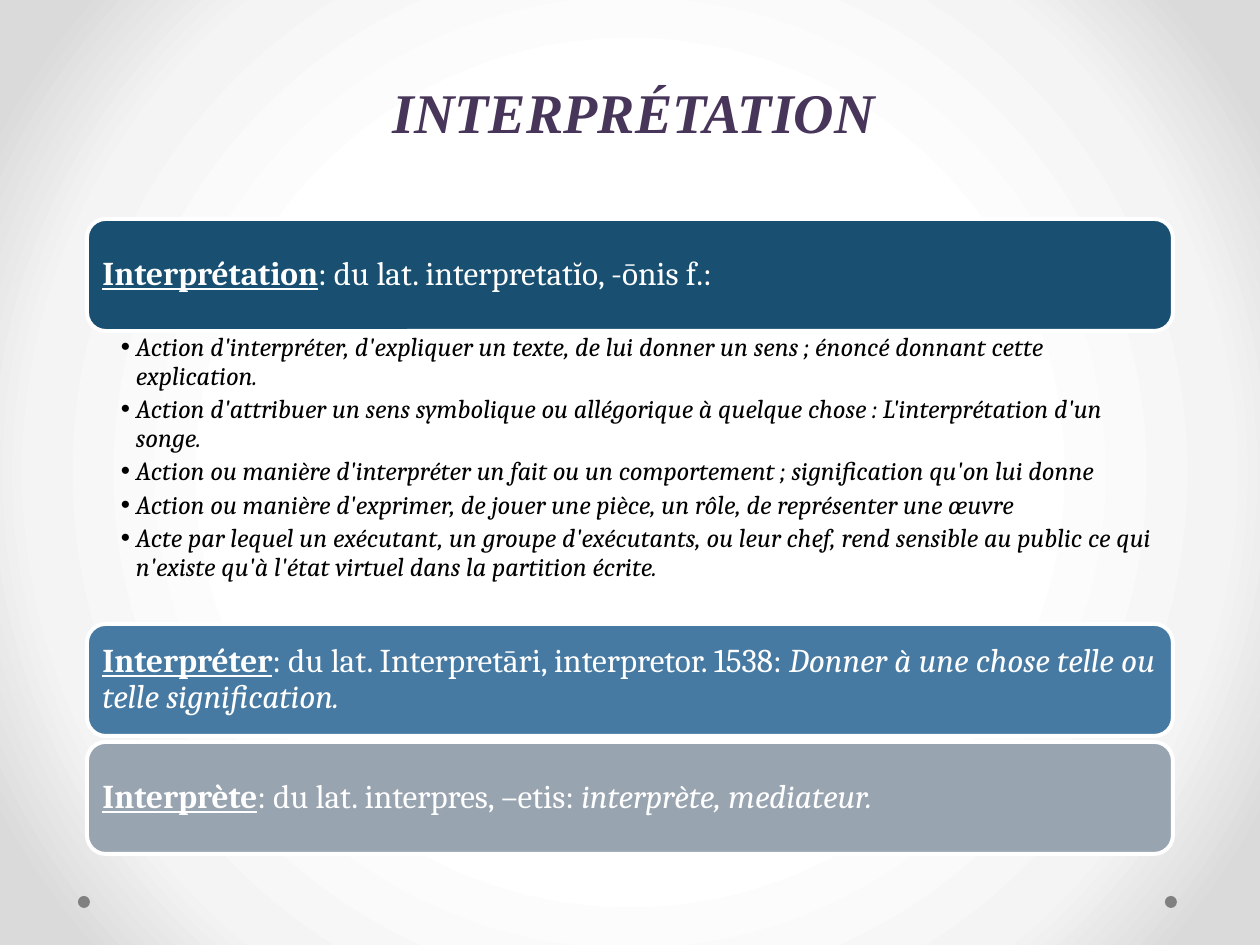
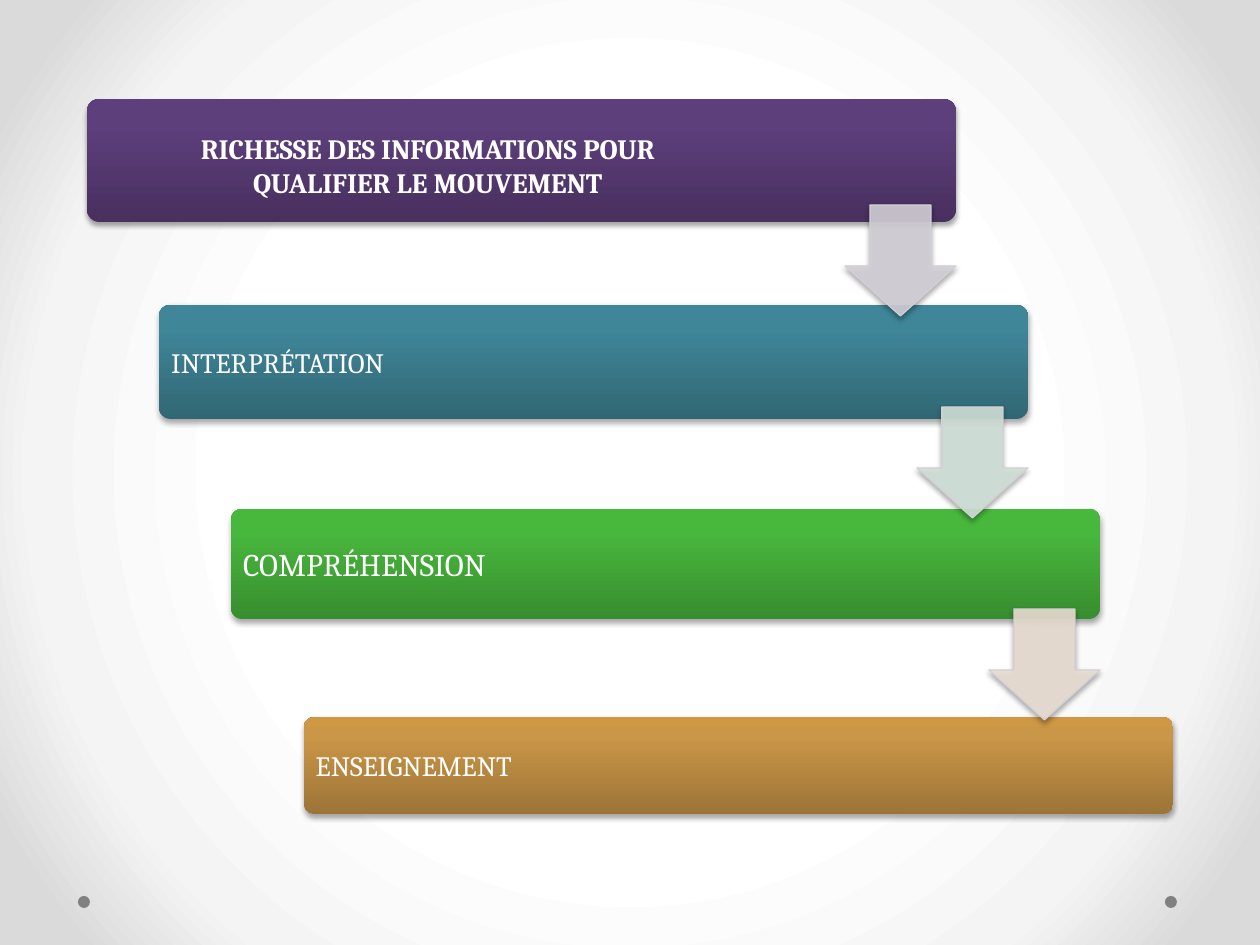
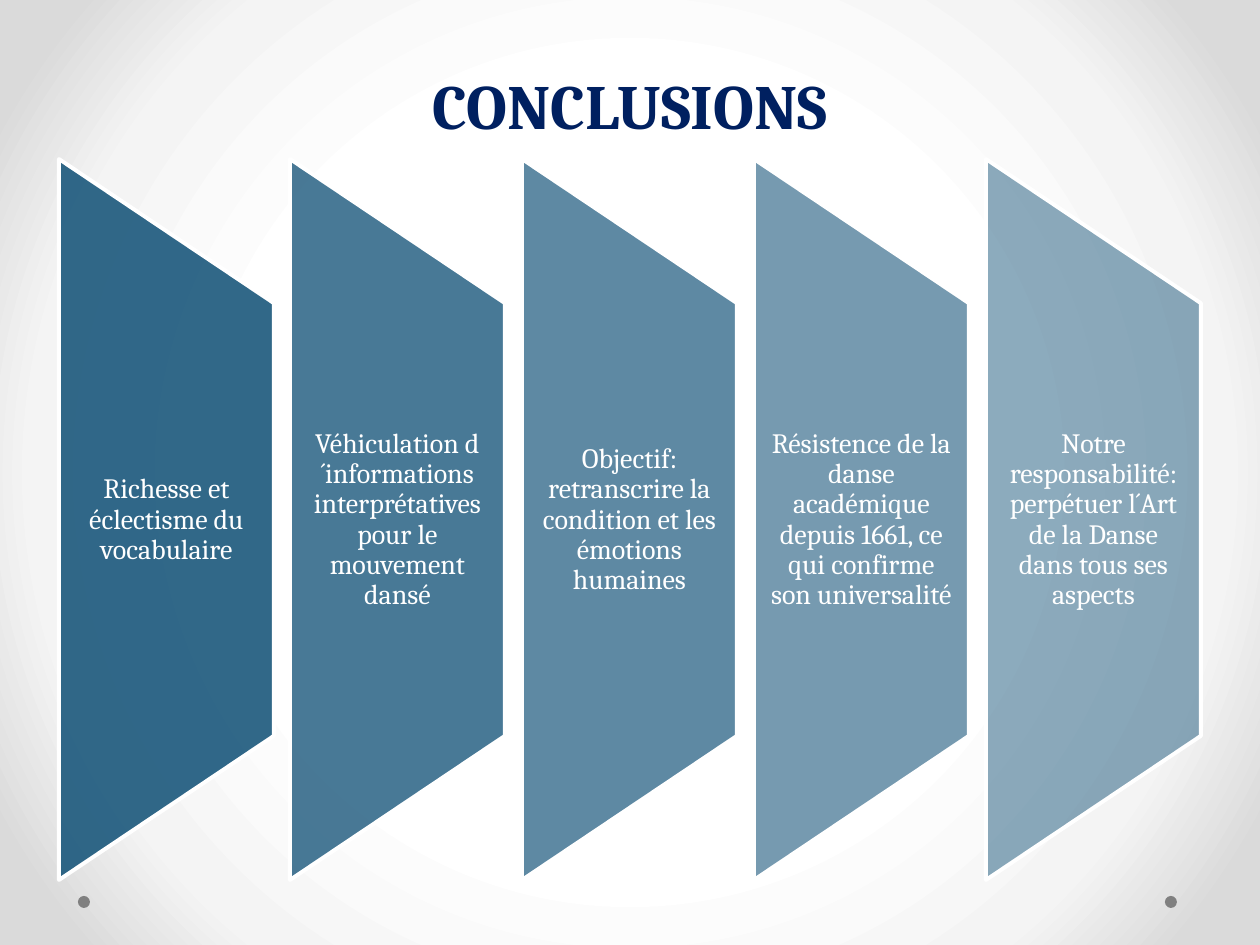
from lxml.etree import SubElement
from pptx import Presentation
from pptx.dml.color import RGBColor
from pptx.enum.shapes import MSO_SHAPE
from pptx.enum.text import MSO_ANCHOR, MSO_AUTO_SIZE, PP_ALIGN
from pptx.oxml import parse_xml
from pptx.oxml.ns import nsdecls, qn
from pptx.util import Inches, Pt

PX = 7257
ROUNDED = MSO_SHAPE.ROUNDED_RECTANGLE
ARROW = MSO_SHAPE.DOWN_ARROW
TRAPEZOID = MSO_SHAPE.FLOWCHART_MANUAL_OPERATION
OVAL = MSO_SHAPE.OVAL
TOP, MIDDLE, BOTTOM = MSO_ANCHOR.TOP, MSO_ANCHOR.MIDDLE, MSO_ANCHOR.BOTTOM
LEFT, CENTER = PP_ALIGN.LEFT, PP_ALIGN.CENTER
NO_FIT = MSO_AUTO_SIZE.NONE
SERIF = "Cambria"

WHITE = RGBColor(0xFF, 0xFF, 0xFF)
BLACK = RGBColor(0, 0, 0)
PALE_GRAY = RGBColor(0xF4, 0xF4, 0xF4)
LIGHT_GRAY = RGBColor(0xDA, 0xDA, 0xDA)
DOT_GRAY = RGBColor(0x80, 0x80, 0x80)
PLUM = RGBColor(0x48, 0x36, 0x5A)
NAVY = RGBColor(0x00, 0x20, 0x60)
DEEP_BLUE = RGBColor(0x19, 0x50, 0x71)
MID_BLUE = RGBColor(0x47, 0x7A, 0xA2)
SLATE = RGBColor(0x99, 0xA4, 0xB1)
PANEL_BLUE = RGBColor(0x1B, 0x58, 0x7C)
PURPLES = RGBColor(0x48, 0x30, 0x5F), RGBColor(0x5D, 0x3F, 0x7B), RGBColor(0x5D, 0x3E, 0x7D)
TEALS = RGBColor(0x31, 0x67, 0x75), RGBColor(0x3F, 0x86, 0x98), RGBColor(0x3E, 0x88, 0x9B)
GREENS = RGBColor(0x38, 0x8D, 0x2F), RGBColor(0x48, 0xB8, 0x3D), RGBColor(0x47, 0xBB, 0x3B)
OCHRES = RGBColor(0x9C, 0x74, 0x37), RGBColor(0xCA, 0x96, 0x47), RGBColor(0xCE, 0x98, 0x45)
ARROW_LILAC = RGBColor(0xD2, 0xCF, 0xD6)
ARROW_MINT = RGBColor(0xD0, 0xE0, 0xD7)
ARROW_SAND = RGBColor(0xE9, 0xDD, 0xD1)


def gradient(positions, colors, direction):
    stops = "".join(
        f'<a:gs pos="{position * 1000}"><a:srgbClr val="{color}"/></a:gs>'
        for position, color in zip(positions, colors)
    )
    return parse_xml(
        f'<a:gradFill {nsdecls("a")} rotWithShape="1"><a:gsLst>{stops}</a:gsLst>{direction}</a:gradFill>'
    )


def add_panel(page, preset, bounds, color, line=None, width=0, alpha=100, shadow=False):
    panel = page.shapes.add_shape(preset, *[n * PX for n in bounds])
    panel.fill.solid()
    panel.fill.fore_color.rgb = color
    properties = panel.element.spPr
    if alpha < 100:
        tint = properties.find(qn("a:solidFill"))[0]
        SubElement(tint, qn("a:alpha"), val=str(alpha * 1000))
    if line is None:
        panel.line.fill.background()
    else:
        panel.line.color.rgb = line
        panel.line.width = Pt(width)
    panel.shadow.inherit = False
    if shadow:
        outer = SubElement(
            properties.find(qn("a:effectLst")), qn("a:outerShdw"),
            blurRad=str(Pt(3.1)), dist=str(Pt(1.8)), dir="5400000", rotWithShape="0",
        )
        shade = SubElement(outer, qn("a:srgbClr"), val=str(BLACK))
        SubElement(shade, qn("a:alpha"), val="35000")
    return panel


deck = Presentation()
deck.slide_width, deck.slide_height = Inches(10), Inches(7.5)
definitions = deck.slides.add_slide(deck.slide_layouts[1])
stairs = deck.slides.add_slide(deck.slide_layouts[6])
conclusions = deck.slides.add_slide(deck.slide_layouts[5])

master = deck.slide_master
master.background.fill.gradient()
backdrop = master.element.find(".//" + qn("a:gradFill"))
backdrop.getparent().replace(backdrop, gradient(
    (50, 76, 92), (WHITE, PALE_GRAY, LIGHT_GRAY),
    '<a:path path="circle"><a:fillToRect l="50000" t="50000" r="50000" b="50000"/></a:path>',
))
for left in (1165, 78):
    dot = add_panel(definitions, OVAL, (left, 896, 12, 12), DOT_GRAY)
    master.shapes.element.append(dot.element)

titles = [
    (definitions, "INTERPRÉTATION", (91, 0, 1086, 151), BOTTOM, "Times New Roman", 32, PLUM, True),
    (conclusions, "CONCLUSIONS", (315, 60, 630, 127), TOP, SERIF, 36, NAVY, False),
]
for page, words, bounds, anchor, face, size, color, italic in titles:
    title = page.shapes.title
    title.left, title.top, title.width, title.height = [n * PX for n in bounds]
    frame = title.text_frame
    frame.text = words
    frame.auto_size = NO_FIT
    frame.vertical_anchor = anchor
    para = frame.paragraphs[0]
    para.alignment = CENTER
    para.font.name, para.font.size, para.font.color.rgb = face, Pt(size), color
    para.font.bold, para.font.italic = True, italic
definitions.shapes.title.text_frame.paragraphs[0].line_spacing = Pt(58)

terms = [
    (219, DEEP_BLUE, "Interprétation", ": du lat. interpretatĭo, -ōnis f.:", ""),
    (624, MID_BLUE, "Interpréter", ": du lat. Interpretāri, interpretor. 1538: ",
     "Donner à une chose telle ou telle signification."),
    (742, SLATE, "Interprète", ": du lat. interpres, –etis: ", "interprète, mediateur."),
]
for top, color, term, origin, meaning in terms:
    band = add_panel(definitions, ROUNDED, (87, top, 1086, 112), color, WHITE, 2.25)
    frame = band.text_frame
    frame.word_wrap = True
    frame.vertical_anchor = MIDDLE
    frame.margin_left = frame.margin_right = frame.margin_top = frame.margin_bottom = 10 * PX
    para = frame.paragraphs[0]
    para.alignment = LEFT
    para.line_spacing = 0.9
    para.font.name, para.font.size, para.font.color.rgb = SERIF, Pt(19), WHITE
    span = para.add_run()
    span.text = term
    span.font.bold = span.font.underline = True
    para.add_run().text = origin
    if meaning:
        span = para.add_run()
        span.text = meaning
        span.font.italic = True

senses = [
    "Action d'interpréter, d'expliquer un texte, de lui donner un sens ; énoncé donnant cette explication.",
    "Action d'attribuer un sens symbolique ou allégorique à quelque chose : L'interprétation d'un songe.",
    "Action ou manière d'interpréter un fait ou un comportement ; signification qu'on lui donne",
    "Action ou manière d'exprimer, de jouer une pièce, un rôle, de représenter une œuvre",
    "Acte par lequel un exécutant, un groupe d'exécutants, ou leur chef, rend sensible au public "
    "ce qui n'existe qu'à l'état virtuel dans la partition écrite.",
]
body = definitions.placeholders[1]
body.left, body.top, body.width, body.height = [n * PX for n in (87, 330, 1086, 292)]
frame = body.text_frame
frame.text = "\n".join(senses)
frame.auto_size = NO_FIT
frame.vertical_anchor = TOP
frame.margin_left, frame.margin_right = 34 * PX, 19 * PX
frame.margin_top = frame.margin_bottom = 4 * PX
for para in frame.paragraphs:
    para.line_spacing = 0.9
    para.space_before, para.space_after = Pt(0), Pt(3)
    para.font.name, para.font.size, para.font.color.rgb = SERIF, Pt(15), BLACK
    para.font.italic = True
    settings = para._p.get_or_add_pPr()
    settings.set("marL", str(15 * PX))
    settings.set("indent", str(-15 * PX))
    bullet = SubElement(settings, qn("a:buChar"), char="•")
    settings.remove(bullet)
    settings.insert_element_before(bullet, "a:tabLst", "a:defRPr", "a:extLst")

steps = [
    (99, 123, PURPLES, "RICHESSE DES INFORMATIONS POUR\nQUALIFIER LE MOUVEMENT", 16),
    (305, 114, TEALS, "INTERPRÉTATION", 16),
    (509, 110, GREENS, "COMPRÉHENSION", 18),
    (717, 97, OCHRES, "ENSEIGNEMENT", 16),
]
for index, (top, height, colors, words, size) in enumerate(steps):
    bar = add_panel(stairs, ROUNDED, (87 + 217 * index // 3, top, 869, height), colors[0], shadow=True)
    bar.adjustments[0] = 0.1
    properties = bar.element.spPr
    properties.replace(
        properties.find(qn("a:solidFill")),
        gradient((0, 80, 100), colors, '<a:lin ang="16200000" scaled="0"/>'),
    )
    first = index == 0
    frame = bar.text_frame
    frame.text = words
    frame.word_wrap = True
    frame.vertical_anchor = MIDDLE
    frame.margin_left, frame.margin_right = (13 if first else 9) * PX, 200 * PX
    frame.margin_top, frame.margin_bottom = (19 if first else 9) * PX, 9 * PX
    for para in frame.paragraphs:
        para.alignment = CENTER if first else LEFT
        para.font.name, para.font.size, para.font.color.rgb = SERIF, Pt(size), WHITE
        para.font.bold = first

for index, color in enumerate((ARROW_LILAC, ARROW_MINT, ARROW_SAND)):
    arrow = add_panel(stairs, ARROW, (845 + 72 * index, 205 + 202 * index, 111, 111),
                      color, ARROW_LILAC, 0.75, alpha=90, shadow=True)
    arrow.adjustments[0], arrow.adjustments[1] = 0.55, 0.45

findings = [
    "Richesse et éclectisme du vocabulaire",
    "Véhiculation d´informations interprétatives pour le mouvement dansé",
    "Objectif: retranscrire la condition et les émotions humaines",
    "Résistence de la danse académique depuis 1661, ce qui confirme son universalité",
    "Notre responsabilité: perpétuer l´Art de la Danse dans tous ses aspects",
]
for index, words in enumerate(findings):
    shift = 927 * index // 4
    blade = add_panel(conclusions, TRAPEZOID, (shift - 194, 412, 721, 215),
                      PANEL_BLUE, WHITE, 2.25, alpha=90 - 10 * index)
    blade.rotation = 270
    box = conclusions.shapes.add_textbox(*[n * PX for n in (59 + shift, 304, 215, 432)])
    frame = box.text_frame
    frame.text = words
    frame.word_wrap = True
    frame.vertical_anchor = MIDDLE
    frame.margin_left = frame.margin_right = 14 * PX
    frame.margin_top = frame.margin_bottom = 0
    para = frame.paragraphs[0]
    para.alignment = CENTER
    para.line_spacing = 0.9
    para.font.name, para.font.size, para.font.color.rgb = SERIF, Pt(16), WHITE

deck.save("out.pptx")
